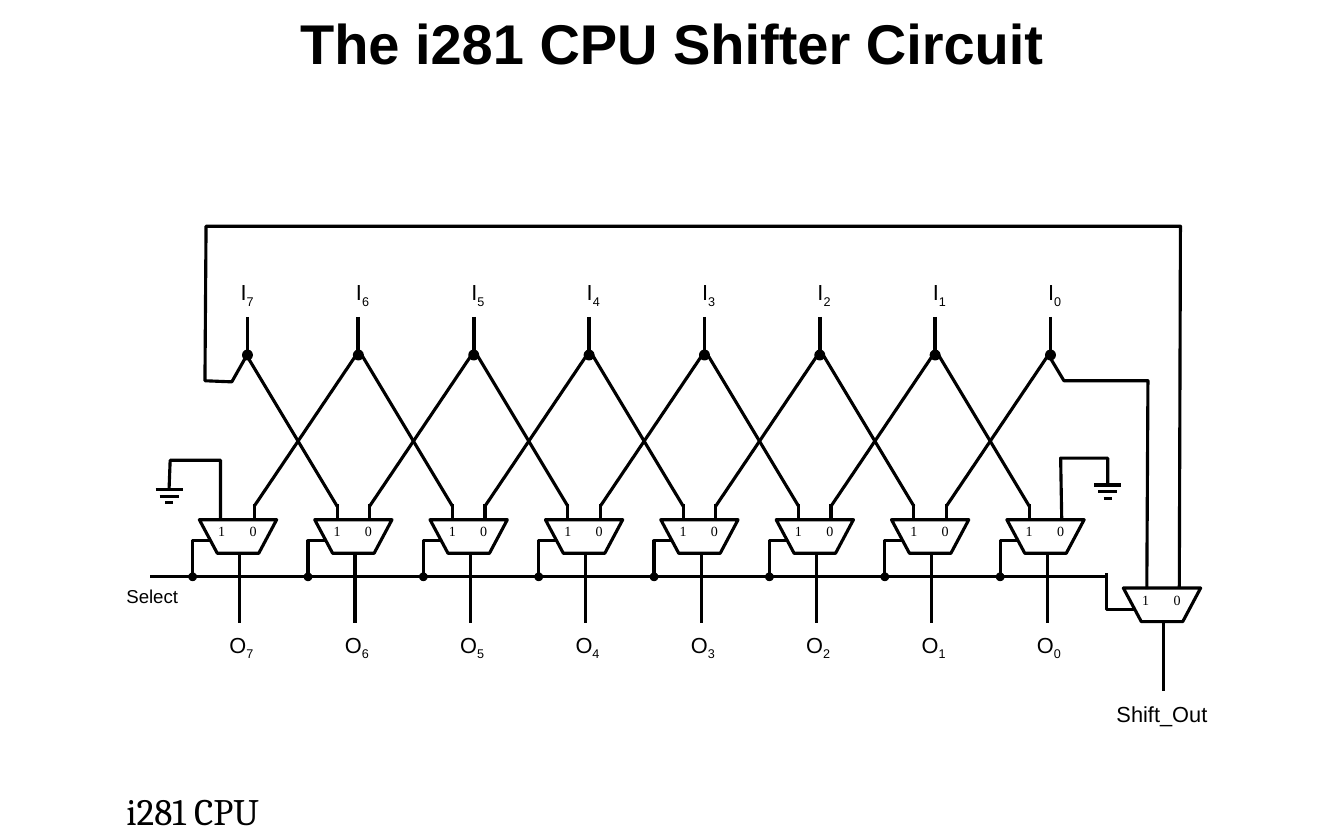
import pptx
import pptx.dml.color
import pptx.enum.shapes
import pptx.enum.text
import pptx.util
from lxml import etree
from pptx.oxml.ns import qn
from pptx.util import Inches

BITS = 8
PITCH = 1.03
FIRST_MUX = 1.78
MUX_TOP = 4.64
MUX_WIDTH, MUX_HEIGHT = 0.69, 0.3
INPUT_1, INPUT_0, OUTPUT = 0.2, 0.49, 0.36  # offsets from the left of a mux
SELECT_Y = 5.15
NODE_Y = 3.17


def color(value):
    return pptx.dml.color.RGBColor.from_string(value)


class Circuit:
    """Holds the drawing style and the slide that is drawn on."""

    ink = "000000"
    paper = "FFFFFF"
    font = "Arial"
    weight = 2

    def __init__(self, page):
        self.shapes = page.shapes

    def stroke(self, item, weight=None):
        item.line.color.rgb = color(self.ink)
        item.line.width = pptx.util.Pt(weight or self.weight)

    def line(self, x1, y1, x2, y2, weight=None):
        wire = self.shapes.add_connector(
            pptx.enum.shapes.MSO_CONNECTOR.STRAIGHT,
            Inches(x1), Inches(y1), Inches(x2), Inches(y2))
        self.stroke(wire, weight)
        etree.SubElement(wire._element.spPr, qn("a:effectLst"))

    def route(self, *points):
        """Draw a bent wire through the points."""
        corners = [(Inches(x), Inches(y)) for x, y in points]
        builder = self.shapes.build_freeform(*corners[0])
        builder.add_line_segments(corners[1:], close=False)
        wire = builder.convert_to_shape()
        wire.shadow.inherit = False
        wire.fill.background()
        self.stroke(wire)

    def preset(self, kind, x, y, width, height, fill):
        shape = self.shapes.add_shape(
            kind, Inches(x), Inches(y), Inches(width), Inches(height))
        shape.shadow.inherit = False
        shape.fill.solid()
        shape.fill.fore_color.rgb = color(fill)
        self.stroke(shape)
        return shape

    def dot(self, x, y, size):
        self.preset(pptx.enum.shapes.MSO_SHAPE.OVAL,
                    x - size / 2, y - size / 2, size, size, self.ink)

    def text(self, x, y, width, height, words, size,
             font=None, subscript="", wrap=False):
        box = self.shapes.add_textbox(
            Inches(x), Inches(y), Inches(width), Inches(height))
        box.text_frame.word_wrap = wrap
        para = box.text_frame.paragraphs[0]
        for part in filter(None, (words, subscript)):
            span = para.add_run()
            span.text = part
            span.font.size = pptx.util.Pt(size)
            span.font.name = font or self.font
            span.font.color.rgb = color(self.ink)
        if subscript:
            span.font._element.set("baseline", "-25000")
        return box

    def title(self, words):
        box = self.text(1, 0, 10, 0.75, words, 36, wrap=True)
        box.text_frame.vertical_anchor = pptx.enum.text.MSO_ANCHOR.MIDDLE
        para = box.text_frame.paragraphs[0]
        para.alignment = pptx.enum.text.PP_ALIGN.CENTER
        para.runs[0].font.bold = True

    def mux(self, x, y):
        """Draw a multiplexer with its input numbers and output wire."""
        body = self.preset(pptx.enum.shapes.MSO_SHAPE.TRAPEZOID,
                           x, y, MUX_WIDTH, MUX_HEIGHT, self.paper)
        body.rotation = 180
        body.adjustments[0] = 0.534
        self.line(x + OUTPUT, y + MUX_HEIGHT, x + OUTPUT, y + 0.92)
        box = self.text(x + 0.07, y - 0.02, 0.56, 0.25, "1\t0", 9,
                        font="Times New Roman", wrap=True)
        properties = box.text_frame.paragraphs[0]._p.get_or_add_pPr()
        stops = etree.SubElement(properties, qn("a:tabLst"))
        etree.SubElement(stops, qn("a:tab"), pos=str(Inches(0.28)), algn="l")

    def ground(self, x, y):
        for step, half in enumerate((0.12, 0.085, 0.035)):
            level = y + 0.06 * step
            self.line(x - half, level, x + half, level)


def draw_shifter(circuit):
    circuit.ground(9.89, 4.33)
    circuit.route((9.48, 4.64), (9.47, 4.09), (9.89, 4.09), (9.89, 4.33))
    circuit.ground(1.51, 4.37)
    circuit.route((1.97, 4.65), (1.97, 4.11), (1.52, 4.11), (1.51, 4.37))

    circuit.text(1.03, 5.17, 0.67, 0.3, "Select", 12)
    circuit.line(1.34, SELECT_Y, 9.88, SELECT_Y)
    circuit.mux(10.03, 5.25)
    circuit.text(9.87, 6.21, 1.05, 0.29, "Shift_Out", 14)
    circuit.route((9.88, 5.12), (9.88, 5.44), (10.14, 5.44))

    for column in range(BITS):
        left = FIRST_MUX + PITCH * column
        bit = str(BITS - 1 - column)
        first, last = column == 0, column == BITS - 1

        circuit.mux(left, MUX_TOP)
        circuit.text(left + 0.17, 5.59, 0.45, 0.29, "O", 14, subscript=bit)
        tap = left - 0.06
        circuit.dot(tap, SELECT_Y, 0.05)
        circuit.route((tap, 5.13), (tap, 4.83), (left + 0.1, 4.83))

        if not first:
            circuit.line(left + INPUT_1, 4.5, left + INPUT_1, MUX_TOP)
        if not last:
            circuit.line(left + INPUT_0, 4.5, left + INPUT_0, MUX_TOP)
            # Each pair of neighbours crosses over
            circuit.line(left + INPUT_0, 4.52, left + 1.4, NODE_Y)
            circuit.line(left + PITCH + INPUT_1, 4.52, left + 0.42, NODE_Y)

        node = left + (0.43 if first else 0.39)
        circuit.text(left + 0.27, 2.44, 0.38, 0.29, "I", 14, subscript=bit)
        circuit.dot(node, NODE_Y, 0.07)
        circuit.line(node, 2.83, node, 3.15, weight=2.5)

    circuit.route((10.24, 5.26), (10.25, 3.4), (9.5, 3.4), (9.38, 3.2))
    circuit.route((10.53, 5.25), (10.54, 2.02), (1.84, 2.02),
                  (1.83, 3.4), (2.07, 3.41), (2.2, 3.18))


def main():
    deck = pptx.Presentation()
    deck.slide_width, deck.slide_height = Inches(12), Inches(7.5)
    circuit = Circuit(deck.slides.add_slide(deck.slide_layouts[6]))
    draw_shifter(circuit)
    circuit.title("The i281 CPU Shifter Circuit")
    circuit.text(1.03, 6.99, 1.54, 0.51, "i281 CPU", 24, font="Cambria")
    deck.save("out.pptx")


if __name__ == "__main__":
    main()
